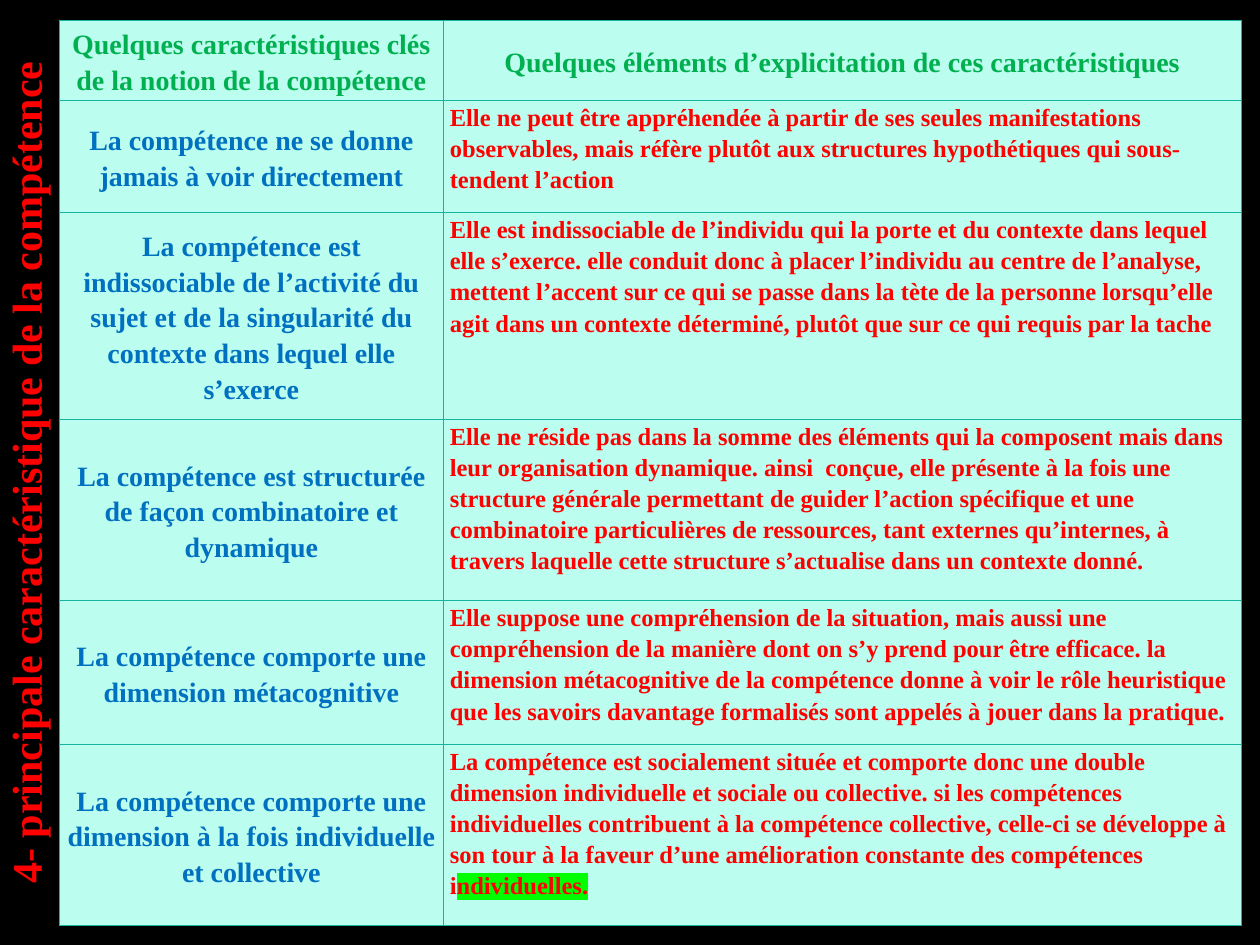
from lxml import etree
from pptx import Presentation
from pptx.dml.color import RGBColor
from pptx.enum.text import MSO_ANCHOR, PP_ALIGN
from pptx.oxml.ns import qn
from pptx.util import Inches, Pt

CENTER, LEFT = PP_ALIGN.CENTER, PP_ALIGN.LEFT
MIDDLE, TOP = MSO_ANCHOR.MIDDLE, MSO_ANCHOR.TOP

BLACK = RGBColor(0x00, 0x00, 0x00)
MINT = RGBColor(0xBB, 0xFD, 0xEE)
TEAL = RGBColor(0x16, 0xB3, 0x9E)
GREEN = RGBColor(0x00, 0xB0, 0x50)
BLUE = RGBColor(0x00, 0x70, 0xC0)
RED = RGBColor(0xFF, 0x00, 0x00)
LIME = RGBColor(0x00, 0xFF, 0x00)

FONT = "Times New Roman"
SLIDE_W, SLIDE_H = Inches(10), Inches(7.5)
COL_WIDTHS = [3.05, 6.33]
ROW_HEIGHTS = [0.64, 0.89, 1.64, 1.44, 1.14, 1.44]

TITLE = "4- principale caractéristique de la compétence"
HEADERS = (
    "Quelques caractéristiques clés de la notion de la compétence",
    "Quelques éléments d’explicitation de ces caractéristiques",
)
ROWS = [
    ("La compétence ne se donne jamais à voir directement",
     "Elle ne peut être appréhendée à partir de ses seules manifestations "
     "observables, mais réfère plutôt aux structures hypothétiques qui "
     "sous-tendent l’action"),
    ("La compétence est indissociable de l’activité du sujet et de la "
     "singularité du contexte dans lequel elle s’exerce",
     "Elle est indissociable de l’individu qui la porte et du contexte dans "
     "lequel elle s’exerce. elle conduit donc à placer l’individu au centre de "
     "l’analyse, mettent l’accent sur ce qui se passe dans la tète de la "
     "personne lorsqu’elle agit dans un contexte déterminé, plutôt que sur ce "
     "qui requis par la tache"),
    ("La compétence est structurée de façon combinatoire et dynamique",
     "Elle ne réside pas dans la somme des éléments qui la composent mais dans "
     "leur organisation dynamique. ainsi  conçue, elle présente à la fois une "
     "structure générale permettant de guider l’action spécifique et une "
     "combinatoire particulières de ressources, tant externes qu’internes, à "
     "travers laquelle cette structure s’actualise dans un contexte donné."),
    ("La compétence comporte une dimension métacognitive",
     "Elle suppose une compréhension de la situation, mais aussi une "
     "compréhension de la manière dont on s’y prend pour être efficace. la "
     "dimension métacognitive de la compétence donne à voir le rôle heuristique "
     "que les savoirs davantage formalisés sont appelés à jouer dans la "
     "pratique."),
    ("La compétence comporte une dimension à la fois individuelle et collective",
     "La compétence est socialement située et comporte donc une double dimension "
     "individuelle et sociale ou collective. si les compétences individuelles "
     "contribuent à la compétence collective, celle-ci se développe à son tour "
     "à la faveur d’une amélioration constante des compétences i"),
]
HIGHLIGHTED_END = "ndividuelles."


def format_run(r, size, color):
    r.font.name = FONT
    r.font.size = Pt(size)
    r.font.bold = True
    r.font.color.rgb = color


def highlight(r, color):
    mark = etree.Element(qn("a:highlight"))
    etree.SubElement(mark, qn("a:srgbClr"), val=str(color))
    r.font._element.find(qn("a:solidFill")).addnext(mark)


def add_borders(cell, color, width):
    tc_pr = cell._tc.get_or_add_tcPr()
    for side in ("lnL", "lnR", "lnT", "lnB"):
        ln = etree.SubElement(tc_pr, qn(f"a:{side}"), w=str(Pt(width)))
        fill = etree.SubElement(ln, qn("a:solidFill"))
        etree.SubElement(fill, qn("a:srgbClr"), val=str(color))


def fill_cell(cell, text, size, color, align, anchor):
    add_borders(cell, TEAL, 0.75)
    cell.fill.solid()
    cell.fill.fore_color.rgb = MINT
    cell.margin_left = cell.margin_right = Inches(0.05)
    cell.margin_top = cell.margin_bottom = 0
    cell.vertical_anchor = anchor
    p = cell.text_frame.paragraphs[0]
    p.text = text
    p.alignment = align
    p.line_spacing = 1.15
    p.space_after = Pt(10)
    format_run(p.runs[0], size, color)


def add_competence_table(slide):
    frame = slide.shapes.add_table(
        len(ROW_HEIGHTS), len(COL_WIDTHS), Inches(0.47), Inches(0.16),
        Inches(sum(COL_WIDTHS)), Inches(sum(ROW_HEIGHTS)))
    table = frame.table
    for column, width in zip(table.columns, COL_WIDTHS):
        column.width = Inches(width)
    for row, height in zip(table.rows, ROW_HEIGHTS):
        row.height = Inches(height)

    for col, text in enumerate(HEADERS):
        fill_cell(table.cell(0, col), text, 16, GREEN, CENTER, MIDDLE)
    for row, (feature, explanation) in enumerate(ROWS, start=1):
        fill_cell(table.cell(row, 0), feature, 16, BLUE, CENTER, MIDDLE)
        fill_cell(table.cell(row, 1), explanation, 14, RED, LEFT, TOP)

    # The closing word of the last cell is marked
    last_cell = table.cell(len(ROWS), 1)
    r = last_cell.text_frame.paragraphs[0].add_run()
    r.text = HIGHLIGHTED_END
    format_run(r, 14, RED)
    highlight(r, LIME)


def add_side_title(slide):
    # As long as the slide is high, turned around its centre
    width, height = SLIDE_H, Inches(0.5)
    center_x = Inches(0.2)
    sp = slide.shapes.add_textbox(
        center_x - width // 2, (SLIDE_H - height) // 2, width, height)
    sp.rotation = 270
    tf = sp.text_frame
    tf.word_wrap = True
    p = tf.paragraphs[0]
    p.text = TITLE
    p.alignment = CENTER
    format_run(p.runs[0], 24, RED)


def main():
    prs = Presentation()
    prs.slide_width, prs.slide_height = SLIDE_W, SLIDE_H
    slide = prs.slides.add_slide(prs.slide_layouts[6])
    slide.background.fill.solid()
    slide.background.fill.fore_color.rgb = BLACK

    add_competence_table(slide)
    add_side_title(slide)
    prs.save("out.pptx")


if __name__ == "__main__":
    main()
